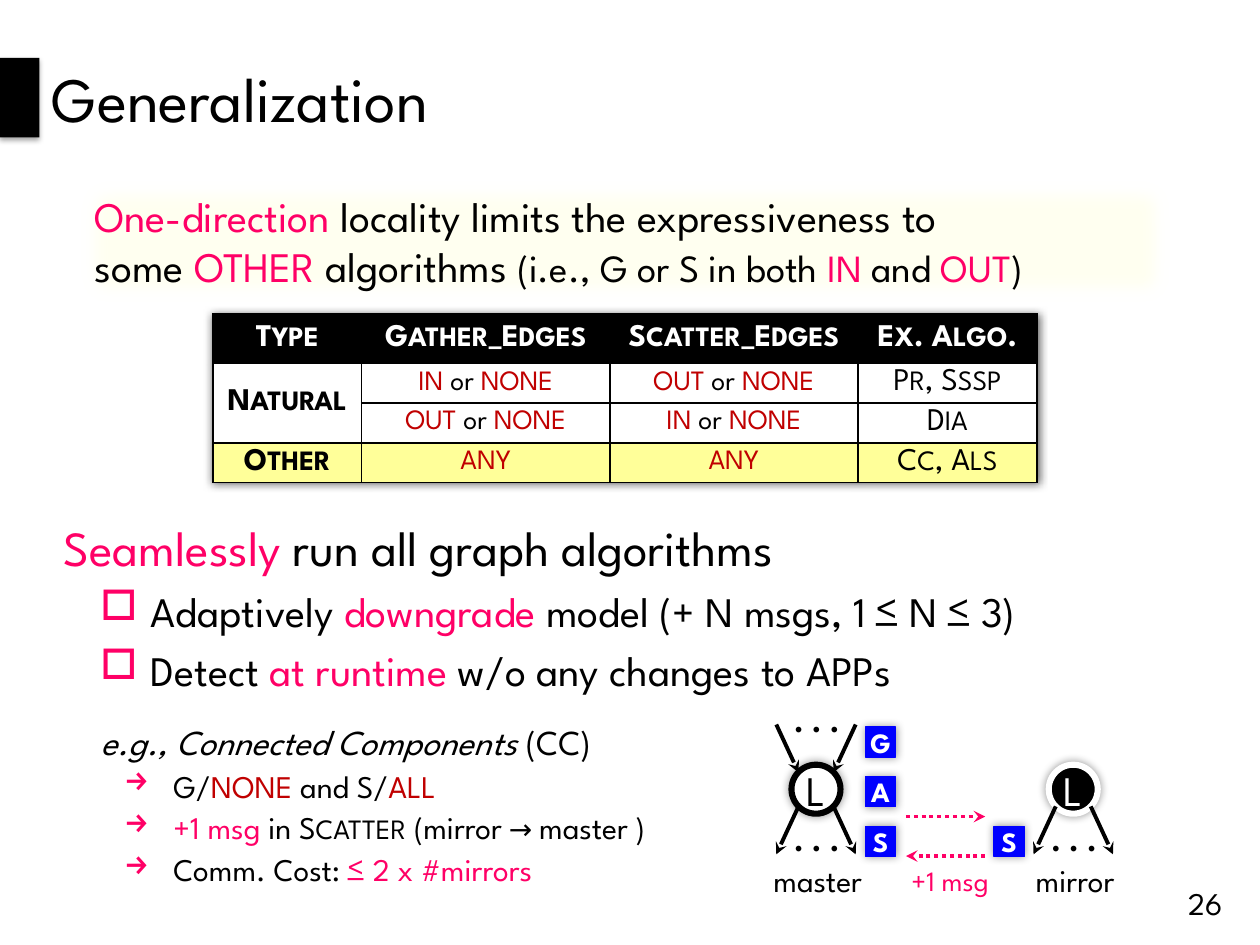
from itertools import groupby

from lxml import etree
from pptx import Presentation
from pptx.dml.color import RGBColor
from pptx.enum.dml import MSO_LINE
from pptx.enum.shapes import MSO_CONNECTOR, MSO_SHAPE
from pptx.enum.text import MSO_ANCHOR, PP_ALIGN
from pptx.oxml.ns import qn
from pptx.util import Pt

FONT = "League Spartan"
BLACK, WHITE, PINK, RED, BLUE = "000000", "FFFFFF", "FF0066", "C00000", "0000FF"
PALE, YELLOW = "FFFFE5", "FFFF99"
RECT, OVAL = MSO_SHAPE.RECTANGLE, MSO_SHAPE.OVAL
STRAIGHT, DOTTED = MSO_CONNECTOR.STRAIGHT, MSO_LINE.ROUND_DOT
TOP, MIDDLE = MSO_ANCHOR.TOP, MSO_ANCHOR.MIDDLE
LEFT, CENTER, RIGHT = PP_ALIGN.LEFT, PP_ALIGN.CENTER, PP_ALIGN.RIGHT


def rgb(color):
    return RGBColor.from_string(color)


def points(*lengths):
    return [Pt(length) for length in lengths]


def sub(parent, tag, **attributes):
    """Append a DrawingML child element."""
    return etree.SubElement(parent, qn("a:" + tag), {k: str(v) for k, v in attributes.items()})


def add_shadow(properties, alpha, blur, distance=0):
    effects = properties.find(qn("a:effectLst"))
    if effects is None:
        effects = sub(properties, "effectLst")
    shadow = sub(effects, "outerShdw", blurRad=Pt(blur), dist=Pt(distance),
                 dir=5400000, algn="ctr", rotWithShape=0)
    sub(sub(shadow, "srgbClr", val=BLACK), "alpha", val=alpha * 1000)


def write(paragraph, runs, align=LEFT, before=0, spacing=None, bullet=None, indent=None):
    """Fill a paragraph with (text, size, colour, styles...) runs."""
    paragraph.alignment = align
    paragraph.space_before = Pt(before)
    if spacing:
        paragraph.line_spacing = spacing
    properties = paragraph._p.get_or_add_pPr()
    if indent:
        margin, hanging = indent
        properties.set("marL", str(Pt(margin)))
        properties.set("indent", str(Pt(-hanging)))
    if bullet:
        sub(sub(properties, "buClr"), "srgbClr", val=PINK)
        sub(properties, "buChar", char=bullet)
    for text, size, color, *styles in runs:
        for position, line in enumerate(text.split("\n")):
            if position:
                paragraph.add_line_break()
            run = paragraph.add_run()
            run.text = line
            font = run.font
            font.name, font.size, font.color.rgb = FONT, Pt(size), rgb(color)
            font.bold, font.italic = "bold" in styles, "italic" in styles


def set_frame(frame, anchor=TOP, insets=(7.2, 3.6, 7.2, 3.6), wrap=True):
    frame.word_wrap, frame.vertical_anchor = wrap, anchor
    (frame.margin_left, frame.margin_top,
     frame.margin_right, frame.margin_bottom) = points(*insets)


def add_text(slide, box, runs=(), align=LEFT, spacing=None, **frame_options):
    frame = slide.shapes.add_textbox(*points(*box)).text_frame
    set_frame(frame, **frame_options)
    if runs:
        write(frame.paragraphs[0], runs, align, spacing=spacing)
    return frame


def add_block(slide, kind, box, fill, line=None, width=0.75):
    block = slide.shapes.add_shape(kind, *points(*box))
    block.shadow.inherit = False
    block.fill.solid()
    block.fill.fore_color.rgb = rgb(fill)
    if line:
        block.line.color.rgb, block.line.width = rgb(line), Pt(width)
    else:
        block.line.fill.background()
    return block


def add_arrow(slide, start, end, color=BLACK, dash=None):
    arrow = slide.shapes.add_connector(STRAIGHT, *points(*start, *end))
    arrow.line.color.rgb, arrow.line.width = rgb(color), Pt(2.25)
    if dash:
        arrow.line.dash_style = dash
    sub(arrow.line._get_or_add_ln(), "tailEnd", type="stealth")
    sub(arrow._element.spPr, "effectLst")


def add_heading(slide, box):
    title = slide.shapes.title
    title.left, title.top, title.width, title.height = points(*box)
    set_frame(title.text_frame, MIDDLE)
    write(title.text_frame.paragraphs[0], [("Generalization", 36, BLACK)])
    marker = add_block(slide, RECT, (0, 33.1, box[0], 45.4), BLACK)
    add_shadow(marker._element.spPr, 35, 3.1, 1.8)


def add_limits(slide, box):
    panel = add_block(slide, RECT, box, PALE)
    properties = panel._element.spPr
    sub(properties.find(qn("a:solidFill"))[0], "alpha", val=50000)
    sub(properties.find(qn("a:effectLst")), "softEdge", rad=Pt(10))
    set_frame(panel.text_frame, insets=(11.5, 8.6, 11.5, 8.6))
    write(panel.text_frame.paragraphs[0], [
        ("One-direction ", 24, PINK),
        ("locality limits the expressiveness to \nsome ", 24, BLACK),
        ("OTHER", 24, PINK), (" algorithms ", 24, BLACK),
        ("(i.e., G or S in both ", 22, BLACK), ("IN", 22, PINK),
        (" and ", 22, BLACK), ("OUT", 22, PINK), (")", 22, BLACK)])


def small_caps(text, color, *styles):
    return [("".join(letters).upper(), 16 if small else 18, color, *styles)
            for small, letters in groupby(text, str.islower)]


def directions(text):
    words = text.split(" or ")
    runs = [(words[0], 16, RED)]
    for word in words[1:]:
        runs += [(" or ", 16, BLACK), (word, 16, RED)]
    return runs


def add_algorithm_table(slide, box):
    rows = [("Type", "Gather_Edges", "Scatter_Edges", "Ex. Algo."),
            ("Natural", "IN or NONE", "OUT or NONE", "Pr, Sssp"),
            ("", "OUT or NONE", "IN or NONE", "Dia"),
            ("Other", "ANY", "ANY", "Cc, Als")]
    table = slide.shapes.add_table(4, 4, *points(*box)).table
    table.first_row = table.horz_banding = False
    add_shadow(table._tbl.tblPr, 60, 5)
    for column, width in zip(table.columns, (85, 141.8, 141.8, 102.3)):
        column.width = Pt(width)
    for row, height in zip(table.rows, (28.4, 22.7, 22.7, 22.7)):
        row.height = Pt(height)
    table.cell(1, 0).merge(table.cell(2, 0))
    for r, (row, fill) in enumerate(zip(rows, (BLACK, WHITE, WHITE, YELLOW))):
        for c, text in enumerate(row):
            cell = table.cell(r, c)
            cell.vertical_anchor = MIDDLE
            cell.margin_left = cell.margin_right = cell.margin_top = cell.margin_bottom = 0
            for side in ("lnL", "lnR", "lnT", "lnB"):
                border = sub(cell._tc.get_or_add_tcPr(), side, w=Pt(1))
                sub(sub(border, "solidFill"), "srgbClr", val=BLACK)
            cell.fill.solid()
            cell.fill.fore_color.rgb = rgb(fill)
            if r and c in (1, 2):
                runs = directions(text)
            else:
                styles = ["bold"] if r == 0 or c == 0 else []
                runs = small_caps(text, BLACK if r else WHITE, *styles)
            write(cell.text_frame.paragraphs[0], runs, CENTER)


def write_outline(frame, lead, items, bullet, lead_indent, indent, **layout):
    """Write a lead line followed by bulleted items."""
    write(frame.paragraphs[0], lead, indent=lead_indent, **layout)
    for item in items:
        write(frame.add_paragraph(), item, bullet=bullet, indent=indent, **layout)


def add_claims(slide, box):
    write_outline(
        add_text(slide, box),
        [("Seamlessly ", 28, PINK), ("run all graph algorithms", 28, BLACK)],
        [[("Adaptively", 24, BLACK), (" downgrade", 24, PINK),
          (" model (+ N msgs, 1 ≤ N ≤ 3)", 24, BLACK)],
         [("Detect ", 24, BLACK), ("at runtime ", 24, PINK),
          ("w/o any changes to APPs", 24, BLACK)]],
        "□", (13.5, 13.5), (49.5, 28.8), before=5)


def add_example(slide, box):
    write_outline(
        add_text(slide, box),
        [("e.g., Connected Components", 20, BLACK, "italic"), (" (CC)", 20, BLACK)],
        [[("G/", 18, BLACK), ("NONE", 18, RED), (" and S/", 18, BLACK), ("ALL", 18, RED)],
         [("+1 msg ", 18, PINK), ("in S", 18, BLACK), ("CATTER", 16, BLACK),
          (" (mirror", 18, BLACK), (" → ", 16, BLACK), ("master )", 18, BLACK)],
         [("Comm. Cost: ", 18, BLACK), ("≤ 2 x #mirrors", 18, PINK)]],
        "→", (28, 20), (49.5, 28), spacing=1.1)


def add_centered(slide, box, text, size, color, *styles, bottom=0, spacing=None):
    add_text(slide, box, [(text, size, color, *styles)], CENTER, spacing,
             anchor=MIDDLE, insets=(0, 0, 0, bottom))


def add_labelled_block(slide, kind, box, text_run, fill, line, width=0.75):
    block = add_block(slide, kind, box, fill, line, width)
    add_shadow(block._element.spPr, 40, 5)
    set_frame(block.text_frame, MIDDLE, (0, 0, 0, 0))
    write(block.text_frame.paragraphs[0], [text_run], CENTER)


def add_vertex(slide, left, top, label, ink, fill, gathers):
    """Draw one vertex with its edges and its caption."""
    middle = left + 34.3
    add_centered(slide, (left, top + 87.8, 70.6, 20.2), label, 18, BLACK, spacing=0.8)
    add_labelled_block(slide, OVAL, (middle - 14, top + 30.2, 28, 28),
                       ("L", 24, ink), fill, ink if gathers else WHITE, 3.5)
    for side in (-1, 1):
        near, far = middle + side * 10, middle + side * 22.7
        if gathers:
            add_arrow(slide, (far, top + 7.2), (near, top + 34.6))
        add_arrow(slide, (near, top + 54), (far, top + 81.4))
    for dots_top in (0, 68.4) if gathers else (68.4,):
        add_centered(slide, (left + 17.3, top + dots_top, 39.6, 20.2),
                     ". . . ", 18, BLACK, "bold", bottom=11.5)


def add_message_diagram(slide, left, top):
    add_vertex(slide, left, top, "master", BLACK, WHITE, True)
    add_vertex(slide, left + 147, top, "mirror", WHITE, BLACK, False)
    for phase, x, step in (("G", 62.6, 0), ("A", 62.6, 1), ("S", 62.6, 2), ("S", 136.1, 2)):
        add_labelled_block(slide, RECT, (left + x, top + 8.6 + step * 28.4, 17.3, 17.3),
                           (phase, 16, WHITE, "bold"), BLUE, BLUE)
    for start, end, y in ((85.7, 131, 59.8), (131, 85.7, 82.4)):
        add_arrow(slide, (left + start, top + y), (left + end, top + y), PINK, DOTTED)
    add_centered(slide, (left + 75.6, top + 87.8, 70.6, 20.2), "+1 msg", 16, PINK, spacing=0.8)


def main():
    deck = Presentation()
    deck.slide_width, deck.slide_height = points(720, 540)
    slide = deck.slides.add_slide(deck.slide_layouts[5])
    add_heading(slide, (22.5, 0, 697.5, 111.6))
    add_claims(slide, (29.5, 292.3, 665.3, 124.6))
    add_algorithm_table(slide, (121.7, 179.3, 470.9, 96.5))
    add_example(slide, (42.5, 406, 391, 105.8))
    add_message_diagram(slide, 432, 406.8)
    add_limits(slide, (42.5, 100, 629.3, 75.6))
    add_text(slide, (671.8, 501.8, 33.8, 28.8), [("26", 18, BLACK)], RIGHT,
             anchor=MIDDLE, wrap=False)
    deck.save("out.pptx")


if __name__ == "__main__":
    main()
